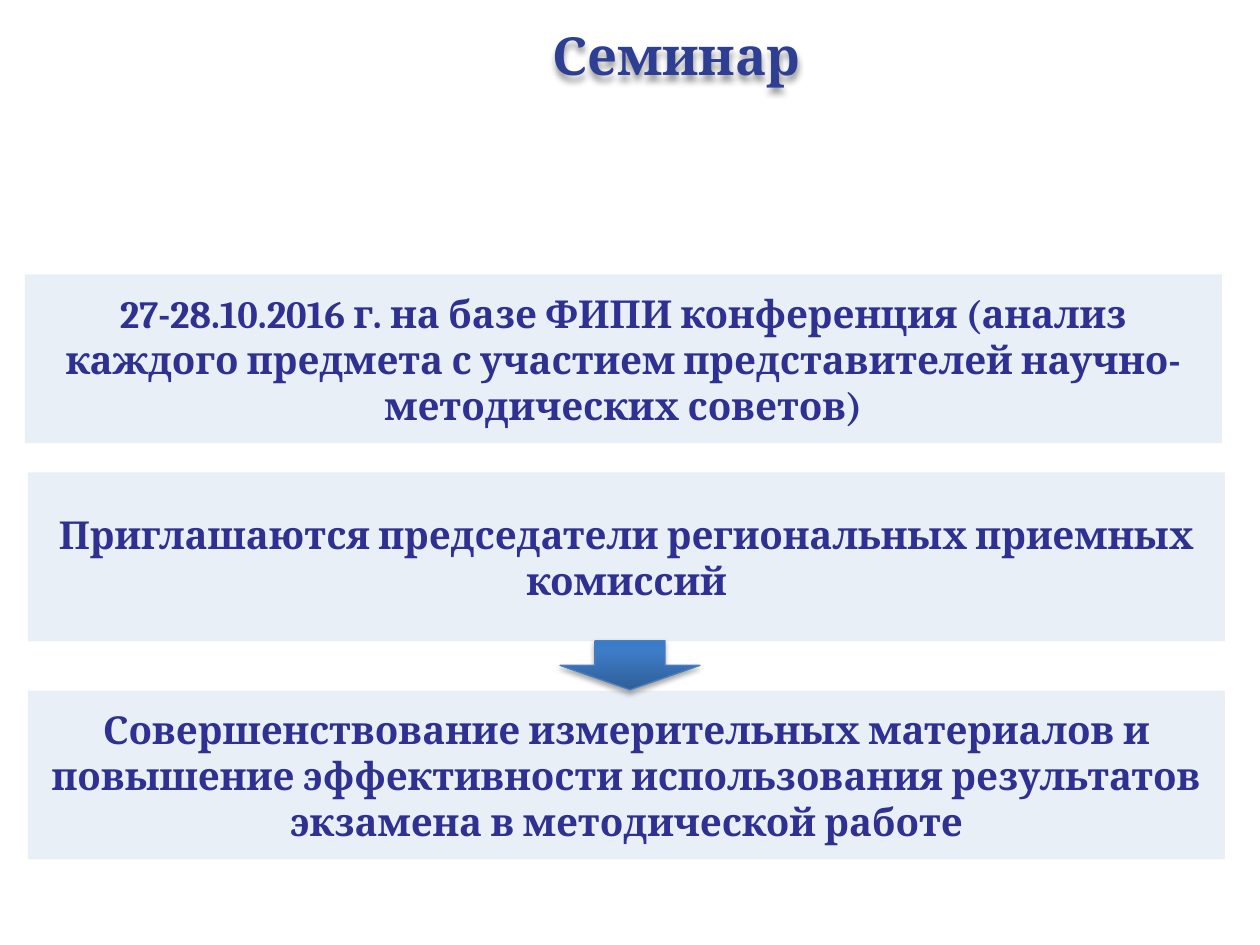
import pptx
import pptx.util
import pptx.dml.color
import pptx.enum.shapes
import pptx.enum.text
import pptx.oxml
import pptx.oxml.ns

Pt = pptx.util.Pt
SHAPE = pptx.enum.shapes.MSO_SHAPE
ANCHOR = pptx.enum.text.MSO_ANCHOR
A_NS = pptx.oxml.ns.nsdecls("a")

TITLE = "Семинар"
PANEL_WIDTH, PANEL_HEIGHT = 684, 96.5
PANELS = [
    (14.2, 156.8, "27-28.10.2016 г. на базе ФИПИ конференция (анализ каждого предмета "
                  "с участием представителей научно-методических советов)"),
    (16, 270, "Приглашаются председатели региональных приемных комиссий"),
    (16, 394.6, "Совершенствование измерительных материалов и повышение эффективности "
                "использования результатов экзамена в методической работе"),
]
ARROW_BOX = (320, 366.2, 80, 28)
ARROW_STOPS = [(0, "2F5F99"), (80, "3D7CC7"), (100, "3A7CCB")]


def rgb(value):
    return pptx.dml.color.RGBColor.from_string(value)


def write(sp, text, size, color, anchor):
    tf = sp.text_frame
    tf.word_wrap = True
    tf.auto_size = pptx.enum.text.MSO_AUTO_SIZE.NONE
    tf.vertical_anchor = anchor
    p = tf.paragraphs[0]
    p.alignment = pptx.enum.text.PP_ALIGN.CENTER
    r = p.add_run()
    r.text = text
    r.font.name = "Cambria"
    r.font.size = Pt(size)
    r.font.bold = True
    r.font.color.rgb = rgb(color)


def add_shadow(sp, blur, distance, opacity):
    sp.shadow.inherit = False
    effects = sp._element.spPr.find(pptx.oxml.ns.qn("a:effectLst"))
    effects.append(pptx.oxml.parse_xml(
        f'<a:outerShdw {A_NS} blurRad="{Pt(blur)}" dist="{Pt(distance)}" dir="5400000" '
        f'rotWithShape="0"><a:srgbClr val="000000"><a:alpha val="{opacity * 1000}"/>'
        f'</a:srgbClr></a:outerShdw>'))


def add_panel(s, left, top, text):
    sp = s.shapes.add_shape(SHAPE.RECTANGLE, Pt(left), Pt(top), Pt(PANEL_WIDTH), Pt(PANEL_HEIGHT))
    sp.shadow.inherit = False
    sp.line.fill.background()
    sp.fill.solid()
    sp.fill.fore_color.rgb = rgb("B9CDE5")
    color = sp._element.spPr.find(".//" + pptx.oxml.ns.qn("a:srgbClr"))
    color.append(pptx.oxml.parse_xml(f'<a:alpha {A_NS} val="31000"/>'))
    write(sp, text, size=22, color="2E3192", anchor=ANCHOR.MIDDLE)


def add_arrow(s):
    sp = s.shapes.add_shape(SHAPE.DOWN_ARROW, *map(Pt, ARROW_BOX))
    sp.line.color.rgb = rgb("4B7EBC")
    sp.line.width = Pt(0.75)
    add_shadow(sp, blur=3.1, distance=1.8, opacity=35)
    stops = "".join(f'<a:gs pos="{pos * 1000}"><a:srgbClr val="{color}"/></a:gs>'
                    for pos, color in ARROW_STOPS)
    geometry = sp._element.spPr.find(pptx.oxml.ns.qn("a:prstGeom"))
    geometry.addnext(pptx.oxml.parse_xml(
        f'<a:gradFill {A_NS}><a:gsLst>{stops}</a:gsLst>'
        f'<a:lin ang="16200000" scaled="0"/></a:gradFill>'))


def main():
    prs = pptx.Presentation()
    prs.slide_width, prs.slide_height = Pt(720), Pt(540)
    s = prs.slides.add_slide(prs.slide_layouts[5])

    title = s.shapes.title
    title.left, title.top, title.width, title.height = map(Pt, (120, 9.4, 533, 44))
    write(title, TITLE, size=30, color="2D3E93", anchor=ANCHOR.TOP)
    add_shadow(title, blur=4, distance=3, opacity=40)

    for left, top, text in PANELS:
        add_panel(s, left, top, text)
    add_arrow(s)
    prs.save("out.pptx")


if __name__ == "__main__":
    main()
